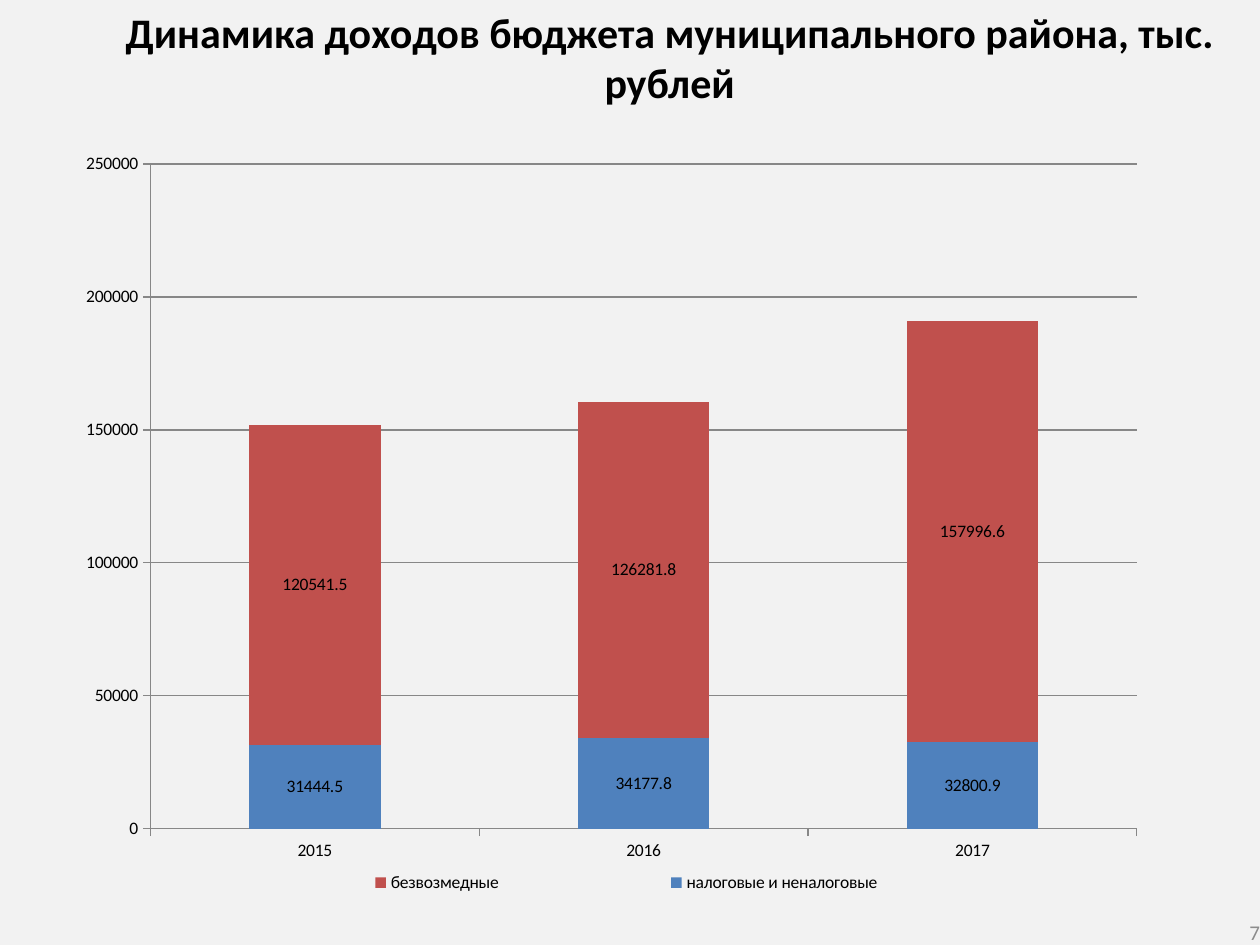
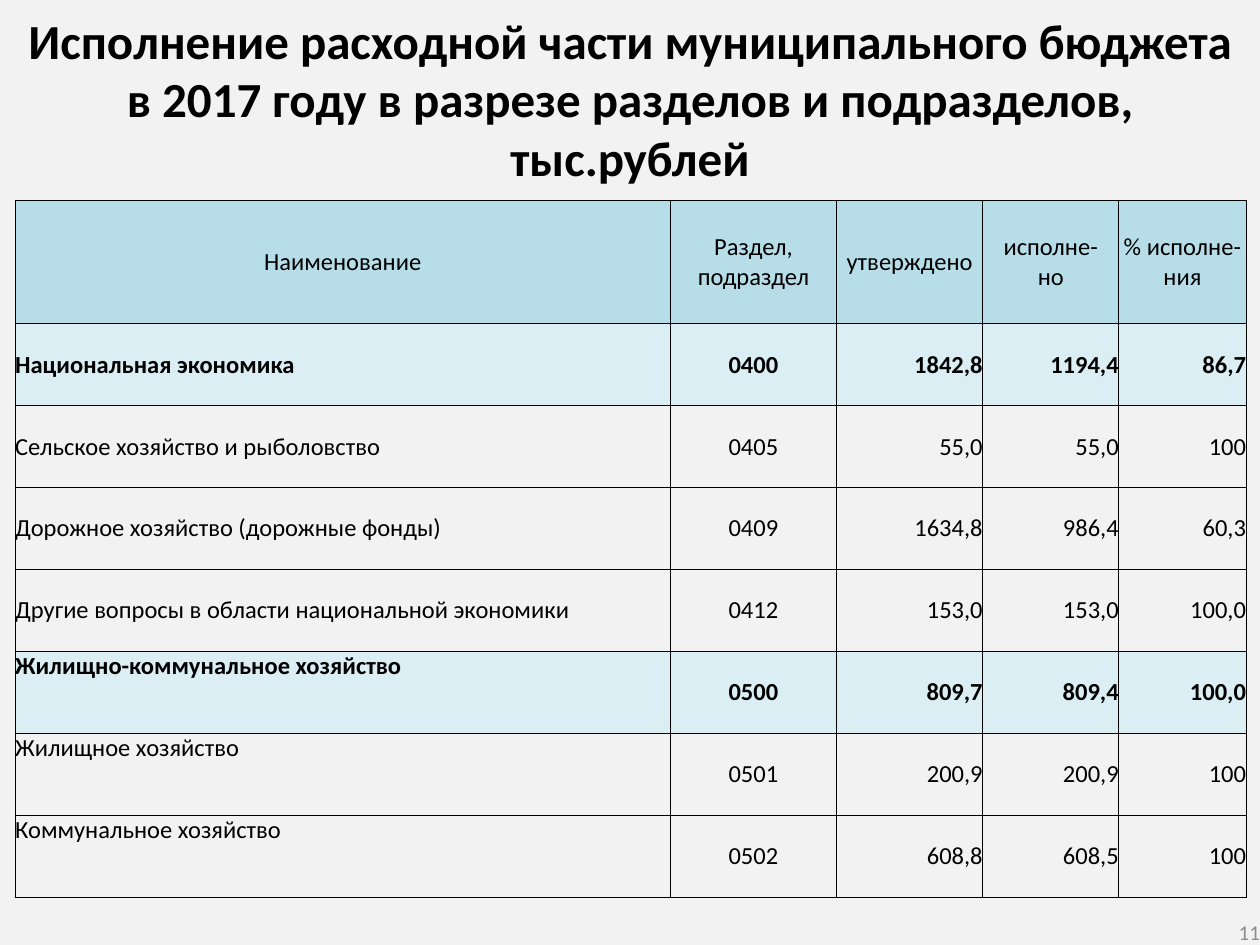
from lxml.etree import SubElement
from pptx import Presentation
from pptx.chart.data import CategoryChartData
from pptx.dml.color import RGBColor
from pptx.enum.chart import XL_CHART_TYPE as ChartType, XL_LEGEND_POSITION as LegendPos
from pptx.enum.chart import XL_TICK_MARK as Tick
from pptx.enum.text import MSO_ANCHOR as Anchor, MSO_AUTO_SIZE as AutoSize, PP_ALIGN as Align
from pptx.oxml import parse_xml
from pptx.oxml.ns import nsdecls, qn
from pptx.util import Inches, Pt

BACKGROUND = RGBColor(0xF2, 0xF2, 0xF2)
BLACK = RGBColor(0, 0, 0)
PAGE_GREY = RGBColor(0x8C, 0x8C, 0x8C)
AXIS_GREY = RGBColor(0x87, 0x87, 0x87)
OWN_BLUE = RGBColor(0x4F, 0x81, 0xBD)
GRANT_RED = RGBColor(0xC0, 0x50, 0x4D)
HEADER_TEAL = RGBColor(0xB7, 0xDE, 0xE8)
SECTION_TEAL = RGBColor(0xDB, 0xEE, 0xF4)
FONT = "Calibri"
PAGE_BOX = (7.67, 7.29, 2.33, 0.21)
NO_MARGINS = dict.fromkeys(("margin_left", "margin_top", "margin_right", "margin_bottom"), 0)

YEARS = ["2015", "2016", "2017"]
INCOME = [
    ("налоговые и неналоговые", OWN_BLUE, (31444.5, 34177.8, 32800.9)),
    ("безвозмедные", GRANT_RED, (120541.5, 126281.8, 157996.6)),
]

HEADINGS = ("Наименование", "Раздел, подраздел", "утверждено", "исполне-\vно", "% исполне-ния")
EXPENSES = [
    ("Национальная экономика", "0400", "1842,8", "1194,4", "86,7"),
    ("Сельское хозяйство и рыболовство", "0405", "55,0", "55,0", "100"),
    ("Дорожное хозяйство (дорожные фонды)", "0409", "1634,8", "986,4", "60,3"),
    ("Другие вопросы в области национальной экономики", "0412", "153,0", "153,0", "100,0"),
    ("Жилищно-коммунальное хозяйство", "0500", "809,7", "809,4", "100,0"),
    ("Жилищное хозяйство", "0501", "200,9", "200,9", "100"),
    ("Коммунальное хозяйство", "0502", "608,8", "608,5", "100"),
]
COLUMN_WIDTHS = (5.2, 1.32, 1.16, 1.08, 1.01)
COLUMN_ALIGNS = (Align.LEFT, Align.CENTER, Align.RIGHT, Align.RIGHT, Align.RIGHT)
HEADER_HEIGHT, ROW_HEIGHT = 0.98, 0.65


def apply(target, formats):
    for name, value in formats.items():
        setattr(target, name, value)


def style_font(font, size, color=BLACK, bold=False):
    apply(font, {"name": FONT, "size": Pt(size), "bold": bold})
    font.color.rgb = color


def write(frame, text, size, align, color=BLACK, bold=False):
    paragraph = frame.paragraphs[0]
    paragraph.text = text
    paragraph.alignment = align
    for run in paragraph.runs:
        style_font(run.font, size, color, bold)


def add_titled_slide(deck, title, box, size, page, frame_formats):
    slide = deck.slides.add_slide(deck.slide_layouts[5])
    heading = slide.shapes.title
    apply(heading, dict(zip(("left", "top", "width", "height"), map(Inches, box))))
    apply(heading.text_frame, {"vertical_anchor": Anchor.TOP, "word_wrap": True, **frame_formats})
    write(heading.text_frame, title, size, Align.CENTER, bold=True)
    number = slide.shapes.add_textbox(*map(Inches, PAGE_BOX)).text_frame
    apply(number, {**NO_MARGINS, "word_wrap": True, "vertical_anchor": Anchor.MIDDLE})
    write(number, page, 12, Align.RIGHT, PAGE_GREY)
    return slide


def set_layout(element, successors, x, y, w, h, target=""):
    for old in element.findall(qn("c:layout")):
        element.remove(old)
    values = {"xMode": "edge", "yMode": "edge", "x": x, "y": y, "w": w, "h": h}
    fields = "".join(f'<c:{name} val="{value}"/>' for name, value in values.items())
    layout = parse_xml(
        f'<c:layout {nsdecls("c")}><c:manualLayout>{target}{fields}</c:manualLayout></c:layout>')
    following = next((child for child in element if child.tag in map(qn, successors)), None)
    if following is None:
        element.append(layout)
    else:
        following.addprevious(layout)


def add_income_chart(slide, box):
    data = CategoryChartData()
    data.categories = YEARS
    for name, _, amounts in INCOME:
        data.add_series(name, amounts)
    chart = slide.shapes.add_chart(ChartType.COLUMN_STACKED, *map(Inches, box), data).chart
    apply(chart, {"has_title": False, "has_legend": True})
    style_font(chart.font, 10)
    apply(chart.legend, {"position": LegendPos.RIGHT, "include_in_layout": False})
    set_layout(chart.legend._element, ("c:overlay", "c:spPr", "c:txPr"), 0.12, 0.93, 0.72, 0.06)
    plot = chart.plots[0]
    apply(plot, {"gap_width": 150, "overlap": 100, "vary_by_categories": False})
    for series, (_, color, _) in zip(plot.series, INCOME):
        series.format.fill.solid()
        series.format.fill.fore_color.rgb = color
        series.data_labels.show_value = True
    amounts_axis = chart.value_axis
    apply(amounts_axis, {"minimum_scale": 0, "maximum_scale": 250000, "major_unit": 50000,
                         "has_major_gridlines": True})
    for axis in (chart.category_axis, amounts_axis):
        apply(axis, {"major_tick_mark": Tick.OUTSIDE, "minor_tick_mark": Tick.NONE})
    for part in (chart.category_axis, amounts_axis, amounts_axis.major_gridlines):
        part.format.line.color.rgb = AXIS_GREY
        part.format.line.width = Pt(0.75)
    set_layout(plot._element.getparent(), ("c:barChart",), 0.07, 0.025, 0.85, 0.865,
               '<c:layoutTarget val="inner"/>')


def add_borders(cell):
    properties = cell._tc.get_or_add_tcPr()
    for index, side in enumerate(("lnL", "lnR", "lnT", "lnB")):
        line = parse_xml(f'<a:{side} {nsdecls("a")} w="{Pt(0.5)}"/>')
        fill = SubElement(line, qn("a:solidFill"))
        SubElement(fill, qn("a:srgbClr"), val=str(BLACK))
        properties.insert(index, line)


def fill_cell(cell, text, align, anchor, color, bold):
    apply(cell, {**NO_MARGINS, "vertical_anchor": anchor})
    write(cell.text_frame, text, 14, align, bold=bold)
    if color is None:
        cell.fill.background()
    else:
        cell.fill.solid()
        cell.fill.fore_color.rgb = color
    add_borders(cell)


def add_expense_table(slide, box):
    rows = [HEADINGS, *EXPENSES]
    table = slide.shapes.add_table(len(rows), len(HEADINGS), *map(Inches, box)).table
    apply(table, {"first_row": False, "horz_banding": False})
    for column, width in zip(table.columns, COLUMN_WIDTHS):
        column.width = Inches(width)
    for r, values in enumerate(rows):
        is_header = r == 0
        is_section = values[1].endswith("00")
        in_housing = values[1].startswith("05")
        color = HEADER_TEAL if is_header else SECTION_TEAL if is_section else None
        table.rows[r].height = Inches(HEADER_HEIGHT if is_header else ROW_HEIGHT)
        for c, text in enumerate(values):
            align = Align.CENTER if is_header else COLUMN_ALIGNS[c]
            anchor = Anchor.TOP if in_housing and c == 0 else Anchor.MIDDLE
            fill_cell(table.cell(r, c), text, align, anchor, color, is_section)


def build_income_slide(deck):
    slide = add_titled_slide(
        deck, "Динамика доходов бюджета муниципального района, тыс. рублей",
        (0.87, 0, 8.89, 0.93), 24, "7", {"auto_size": AutoSize.NONE})
    add_income_chart(slide, (0.55, 1.15, 9.21, 6.1))


def build_expense_slide(deck):
    slide = add_titled_slide(
        deck, "Исполнение расходной части муниципального бюджета в 2017 году "
        "в разрезе разделов и подразделов, тыс.рублей",
        (0, 0, 10, 1.54), 28, "11",
        {"auto_size": AutoSize.SHAPE_TO_FIT_TEXT, "margin_top": Inches(0.08)})
    add_expense_table(slide, (0.12, 1.59, 9.76, 5.55))


def main():
    deck = Presentation()
    apply(deck, {"slide_width": Inches(10), "slide_height": Inches(7.5)})
    backdrop = deck.slide_master.background.fill
    backdrop.solid()
    backdrop.fore_color.rgb = BACKGROUND
    build_income_slide(deck)
    build_expense_slide(deck)
    deck.save("out.pptx")


if __name__ == "__main__":
    main()
